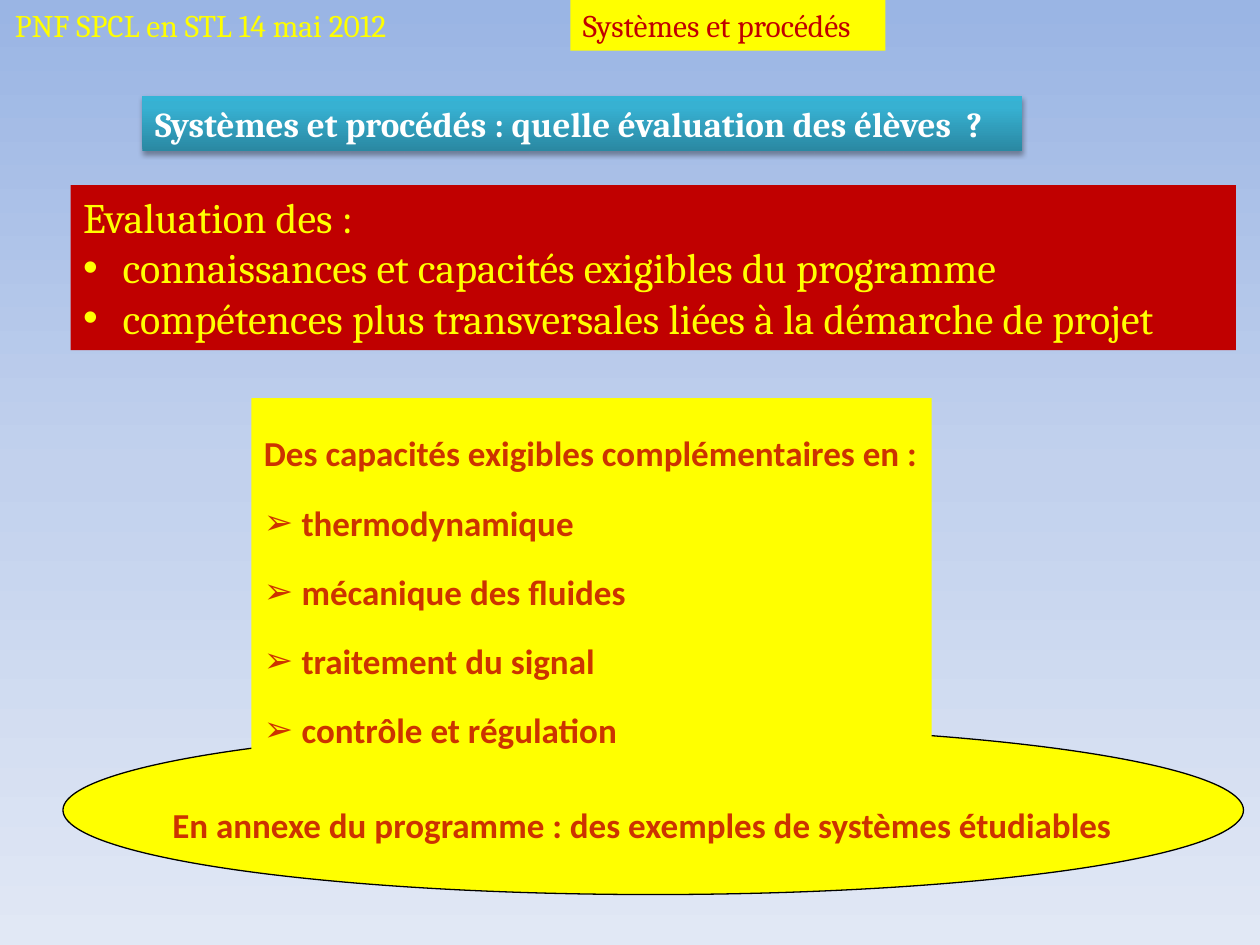
from lxml.etree import SubElement
from pptx import Presentation
from pptx.dml.color import RGBColor
from pptx.enum.shapes import MSO_SHAPE
from pptx.enum.text import MSO_ANCHOR, MSO_AUTO_SIZE, PP_ALIGN
from pptx.oxml.ns import qn
from pptx.util import Pt

COLORS = {
    "yellow": "FFFF00", "red": "C00000", "rust": "CC3300",
    "white": "FFFFFF", "black": "000000",
}
SKY = [(0, "9AB5E4"), (50, "C2D1ED"), (100, "E1E8F5")]
TEAL = [(0, "2A88A2"), (80, "37B1D2"), (100, "34B4D6")]

EVENT = "PNF SPCL en STL 14 mai 2012"
SUBJECT = "Systèmes et procédés"
QUESTION = "Systèmes et procédés : quelle évaluation des élèves  ?"
EVALUATION = [
    "Evaluation des :",
    "connaissances et capacités exigibles du programme",
    "compétences plus transversales liées à la démarche de projet",
]
CAPACITIES = [
    "Des capacités exigibles complémentaires en :",
    "thermodynamique",
    "mécanique des fluides",
    "traitement du signal",
    "contrôle et régulation",
]
ANNEX = "En annexe du programme : des exemples de systèmes étudiables"


def rgb(name):
    return RGBColor.from_string(COLORS[name])


def place(shape, left, top, width, height):
    shape.left, shape.top = Pt(left), Pt(top)
    shape.width, shape.height = Pt(width), Pt(height)


def paint(shape, color):
    shape.fill.solid()
    shape.fill.fore_color.rgb = rgb(color)
    shape.line.fill.background()


def paint_gradient(fill, owner, stops, angle):
    fill.gradient()
    fill.gradient_angle = angle
    stop_list = owner.find(".//" + qn("a:gsLst"))
    for stop in list(stop_list):
        stop_list.remove(stop)
    for position, color in stops:
        stop = SubElement(stop_list, qn("a:gs"), pos=str(position * 1000))
        SubElement(stop, qn("a:srgbClr"), val=color)


def add_shadow(shape):
    effects = SubElement(shape.element.spPr, qn("a:effectLst"))
    shadow = SubElement(effects, qn("a:outerShdw"), blurRad=str(Pt(3.1)),
                        dist=str(Pt(1.8)), dir="5400000", rotWithShape="0")
    tint = SubElement(shadow, qn("a:srgbClr"), val=COLORS["black"])
    SubElement(tint, qn("a:alpha"), val="35000")


def set_bullet(paragraph, bullet, indent):
    properties = paragraph._p.get_or_add_pPr()
    properties.set("marL", str(Pt(indent if bullet else 0)))
    properties.set("indent", str(Pt(-indent if bullet else 0)))
    if bullet:
        SubElement(properties, qn("a:buFont"), typeface="Arial")
        SubElement(properties, qn("a:buChar"), char=bullet)
    else:
        SubElement(properties, qn("a:buNone"))


def write(shape, lines, font, size, color, bold=False, spacing=1.0,
          bullet=None, indent=0, wrap=True):
    frame = shape.text_frame
    frame.text = "\n".join(lines)
    frame.word_wrap = wrap
    frame.auto_size = MSO_AUTO_SIZE.NONE
    frame.vertical_anchor = MSO_ANCHOR.TOP
    frame.margin_left = frame.margin_right = Pt(7.2)
    frame.margin_top = frame.margin_bottom = Pt(3.6)
    for number, paragraph in enumerate(frame.paragraphs):
        set_bullet(paragraph, bullet if number else None, indent)
        paragraph.alignment = PP_ALIGN.LEFT
        paragraph.line_spacing = spacing
        paragraph.space_before = paragraph.space_after = Pt(0)
        for run in paragraph.runs:
            run.font.name = font
            run.font.size = Pt(size)
            run.font.bold = bold
            run.font.color.rgb = rgb(color)


def add_preset(slide, preset, left, top, width, height):
    shape = slide.shapes.add_shape(
        preset, Pt(left), Pt(top), Pt(width), Pt(height))
    shape.shadow.inherit = False
    paint(shape, "yellow")
    return shape


def main():
    deck = Presentation()
    deck.slide_width, deck.slide_height = Pt(720), Pt(540)
    slide = deck.slides.add_slide(deck.slide_layouts[3])
    paint_gradient(slide.background.fill, slide.element, SKY, 270)
    question, evaluation, capacities = slide.placeholders

    oval = add_preset(slide, MSO_SHAPE.OVAL, 36, 414.7, 674.6, 96.5)
    oval.line.color.rgb = rgb("black")
    oval.line.width = Pt(0.75)
    question.element.addprevious(oval.element)

    subject = add_preset(slide, MSO_SHAPE.RECTANGLE, 326, 0, 180, 29)
    write(subject, [SUBJECT], "Cambria", 18, "red")

    event = slide.shapes.add_textbox(Pt(1.4), Pt(0), Pt(248.4), Pt(29))
    write(event, [EVENT], "Cambria", 18, "yellow")

    place(question, 81.4, 54.7, 502.6, 31.7)
    paint_gradient(question.fill, question.element, TEAL, 90)
    question.line.fill.background()
    add_shadow(question)
    write(question, [QUESTION], "Cambria", 20, "white", bold=True)

    place(evaluation, 40.3, 105.8, 666, 94.3)
    paint(evaluation, "red")
    write(evaluation, EVALUATION, "Cambria", 24, "yellow",
          bullet="•", indent=22.5, wrap=False)

    place(capacities, 143.6, 227.5, 388.8, 205.2)
    paint(capacities, "yellow")
    write(capacities, CAPACITIES, "Calibri", 20, "rust", bold=True,
          spacing=1.65, bullet="➢", indent=21.5, wrap=False)

    annex = add_preset(slide, MSO_SHAPE.RECTANGLE, 91.4, 439.9, 554.4, 46.8)
    write(annex, [ANNEX], "Calibri", 20, "rust", bold=True, spacing=1.65)

    deck.save("out.pptx")


if __name__ == "__main__":
    main()
